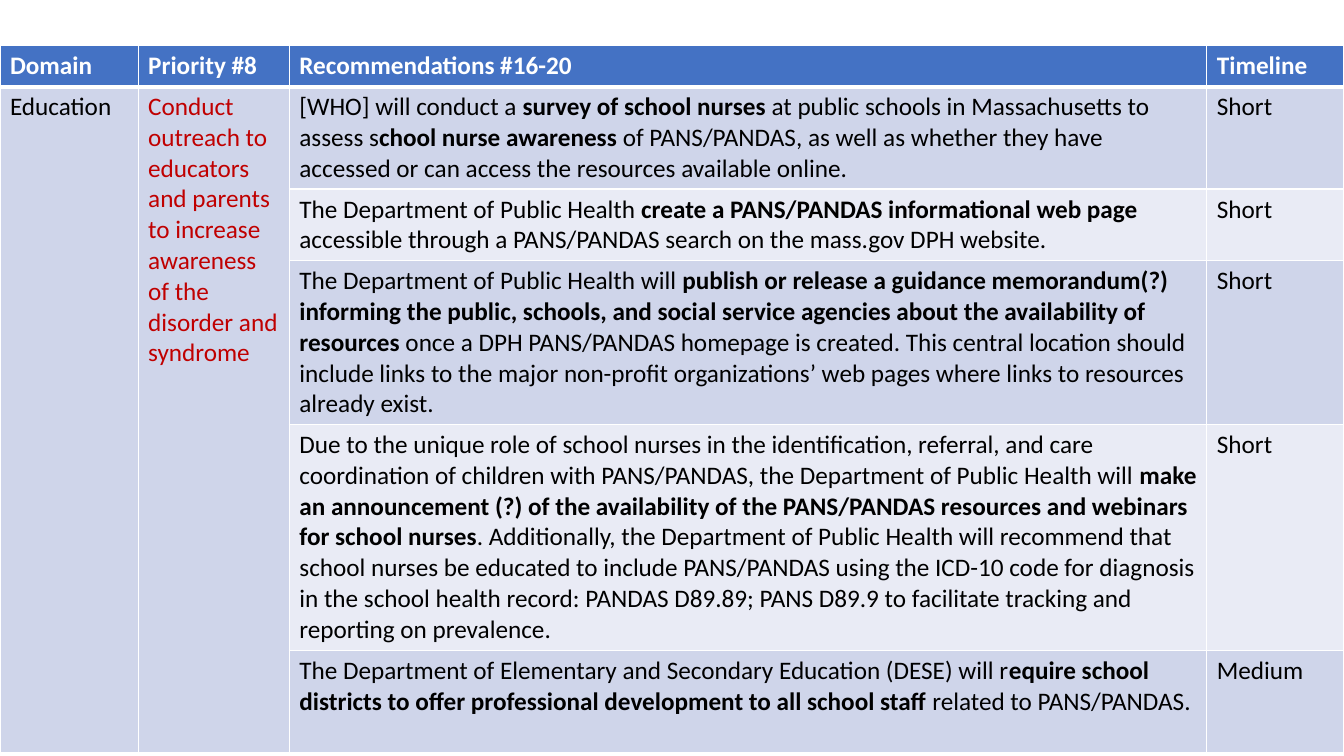
import lxml.etree
import pptx
import pptx.dml.color
import pptx.oxml.ns
import pptx.util

COLORS = {
    "header": "4472C4",
    "band_dark": "CFD5EA",
    "band_light": "E9EBF5",
    "white": "FFFFFF",
    "black": "000000",
    "priority": "C00000",
}
COLUMN_WIDTHS = [1.37, 1.5, 9.1, 1.36]
HEADER_HEIGHT = 0.41
HEADINGS = ["Domain", "Priority #8", "Recommendations #16-20", "Timeline"]
DOMAIN = "Education"
PRIORITY = (
    "Conduct outreach to educators and parents to increase awareness "
    "of the disorder and syndrome"
)
RECOMMENDATIONS = [
    (
        "[WHO] will conduct a **survey of school nurses** at public schools in "
        "Massachusetts to assess s**chool nurse awareness** of PANS/PANDAS, as well as "
        "whether they have accessed or can access the resources available online.",
        "Short",
        1.01,
    ),
    (
        "The Department of Public Health **create a PANS/PANDAS informational web page** "
        "accessible through a PANS/PANDAS search on the mass.gov DPH website.",
        "Short",
        0.71,
    ),
    (
        "The Department of Public Health will **publish or release a guidance "
        "memorandum(?) informing the public, schools, and social service agencies about "
        "the availability of resources** once a DPH PANS/PANDAS homepage is created. This "
        "central location should include links to the major non-profit organizations’ web "
        "pages where links to resources already exist.",
        "Short",
        1.62,
    ),
    (
        "Due to the unique role of school nurses in the identification, referral, and care "
        "coordination of children with PANS/PANDAS, the Department of Public Health will "
        "**make an announcement (?) of the availability of the PANS/PANDAS resources and "
        "webinars for school nurses**. Additionally, the Department of Public Health will "
        "recommend that school nurses be educated to include PANS/PANDAS using the ICD-10 "
        "code for diagnosis in the school health record: PANDAS D89.89; PANS D89.9 to "
        "facilitate tracking and reporting on prevalence.",
        "Short",
        2.24,
    ),
    (
        "The Department of Elementary and Secondary Education (DESE) will r**equire school "
        "districts to offer professional development to all school staff **related to "
        "PANS/PANDAS.",
        "Medium",
        1.01,
    ),
]


def write_text(text_frame, text, font="Calibri", size=18, color="black", bold=False):
    paragraph = text_frame.paragraphs[0]
    for index, part in enumerate(text.split("**")):
        run = paragraph.add_run()
        run.text = part
        run.font.name = font
        run.font.size = pptx.util.Pt(size)
        run.font.bold = bold or index % 2 == 1
        run.font.color.rgb = pptx.dml.color.RGBColor.from_string(COLORS[color])


class SlideBuilder:
    def __init__(self, slide, colors):
        self.slide = slide
        self.colors = colors

    def add_table(self, left, top, column_widths, row_heights):
        frame = self.slide.shapes.add_table(
            len(row_heights),
            len(column_widths),
            pptx.util.Inches(left),
            pptx.util.Inches(top),
            pptx.util.Inches(sum(column_widths)),
            pptx.util.Inches(sum(row_heights)),
        )
        table = frame.table
        for column, width in zip(table.columns, column_widths):
            column.width = pptx.util.Inches(width)
        for row, height in zip(table.rows, row_heights):
            row.height = pptx.util.Inches(height)
        return table

    def style_cell(self, cell, fill, top_width=1, bottom_width=1):
        properties = cell._tc.get_or_add_tcPr()
        widths = {"lnL": 1, "lnR": 1, "lnT": top_width, "lnB": bottom_width}
        for side, width in widths.items():
            line = lxml.etree.SubElement(
                properties, pptx.oxml.ns.qn("a:" + side), w=str(pptx.util.Pt(width))
            )
            solid = lxml.etree.SubElement(line, pptx.oxml.ns.qn("a:solidFill"))
            lxml.etree.SubElement(
                solid, pptx.oxml.ns.qn("a:srgbClr"), val=self.colors["white"]
            )
        cell.fill.solid()
        cell.fill.fore_color.rgb = pptx.dml.color.RGBColor.from_string(self.colors[fill])


def main():
    presentation = pptx.Presentation()
    presentation.slide_width = pptx.util.Inches(13.33)
    presentation.slide_height = pptx.util.Inches(7.5)
    slide = presentation.slides.add_slide(presentation.slide_layouts[6])
    builder = SlideBuilder(slide, COLORS)

    row_heights = [HEADER_HEIGHT] + [height for _, _, height in RECOMMENDATIONS]
    table = builder.add_table(0, 0.45, COLUMN_WIDTHS, row_heights)
    last_row = len(RECOMMENDATIONS)

    for column, heading in enumerate(HEADINGS):
        cell = table.cell(0, column)
        builder.style_cell(cell, "header", bottom_width=3)
        write_text(cell.text_frame, heading, color="white", bold=True)

    for row, (recommendation, timeline, _) in enumerate(RECOMMENDATIONS, start=1):
        band = "band_dark" if row % 2 else "band_light"
        for column in range(len(COLUMN_WIDTHS)):
            fill = "band_dark" if column < 2 else band
            builder.style_cell(table.cell(row, column), fill, top_width=3 if row == 1 else 1)
        write_text(table.cell(row, 2).text_frame, recommendation)
        write_text(table.cell(row, 3).text_frame, timeline)

    for column, (text, color) in enumerate([(DOMAIN, "black"), (PRIORITY, "priority")]):
        cell = table.cell(1, column)
        cell.merge(table.cell(last_row, column))
        write_text(cell.text_frame, text, color=color)

    presentation.save("out.pptx")


if __name__ == "__main__":
    main()
